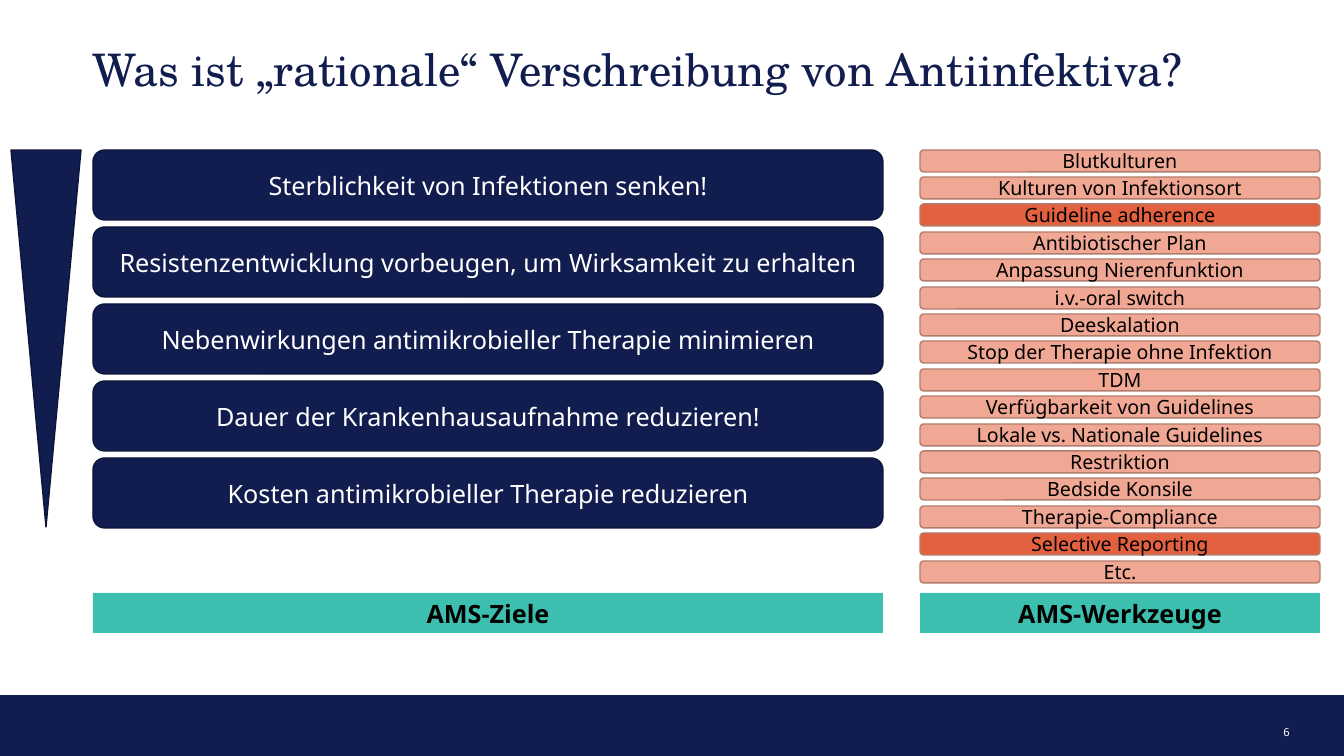
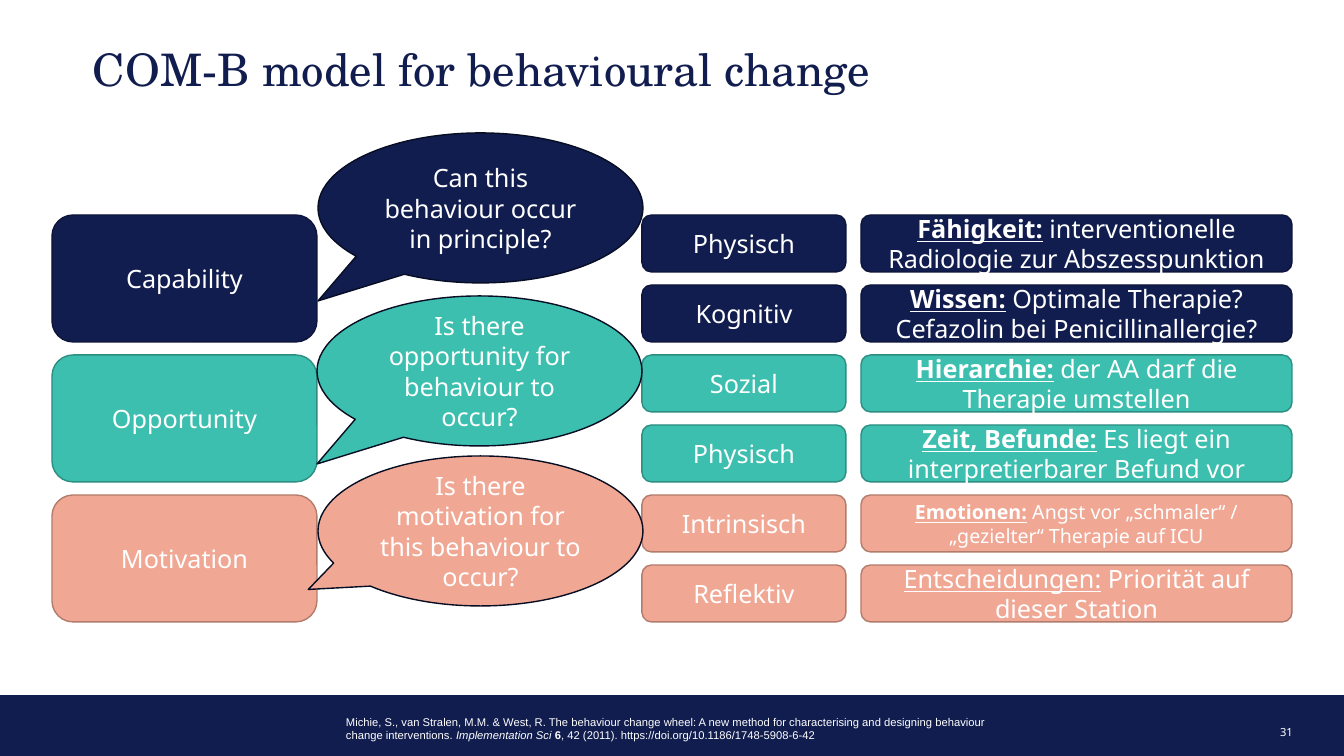
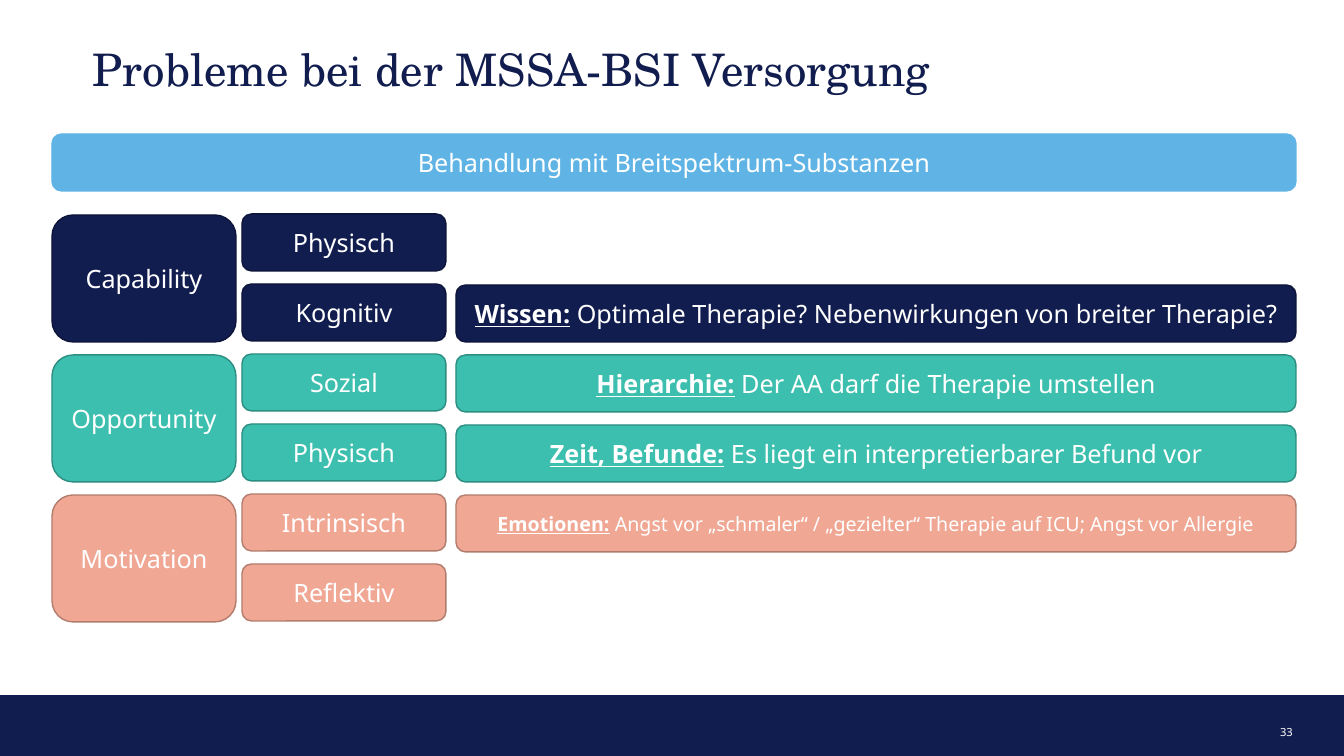
from pptx import Presentation
from pptx.dml.color import RGBColor
from pptx.enum.shapes import MSO_SHAPE
from pptx.enum.text import MSO_ANCHOR, MSO_AUTO_SIZE, PP_ALIGN
from pptx.util import Emu, Pt

COLOURS = {
    "navy": "111D4E",
    "navy edge": "0D153A",
    "callout edge": "070D22",
    "teal": "3CBFAE",
    "teal edge": "2C8D81",
    "salmon": "F0A794",
    "salmon edge": "B27C6D",
    "orange": "E4613F",
    "sky": "5FB4E5",
    "white": "FFFFFF",
    "black": "000000",
}
EMU_PER_PX = 12192000 / 1344
TITLE_FONT, BODY_FONT, CITATION_FONT = "TeX Gyre Schola", "Noto Sans", "Arial"

GOALS = [
    "Sterblichkeit von Infektionen senken!",
    "Resistenzentwicklung vorbeugen, um Wirksamkeit zu erhalten",
    "Nebenwirkungen antimikrobieller Therapie minimieren",
    "Dauer der Krankenhausaufnahme reduzieren!",
    "Kosten antimikrobieller Therapie reduzieren",
]
TOOLS = [
    "Blutkulturen",
    "Kulturen von Infektionsort",
    "Guideline adherence",
    "Antibiotischer Plan",
    "Anpassung Nierenfunktion",
    "i.v.-oral switch",
    "Deeskalation",
    "Stop der Therapie ohne Infektion",
    "TDM",
    "Verfügbarkeit von Guidelines",
    "Lokale vs. Nationale Guidelines",
    "Restriktion",
    "Bedside Konsile",
    "Therapie-Compliance",
    "Selective Reporting",
    "Etc.",
]
KEY_TOOLS = {"Guideline adherence", "Selective Reporting"}
FACTORS = {"Capability": "navy", "Opportunity": "teal", "Motivation": "salmon"}
FACTOR_COLOURS = list(FACTORS.values())
SUBFACTORS = ["Physisch", "Kognitiv", "Sozial", "Physisch", "Intrinsisch", "Reflektiv"]
ROW_TOP, ROW_PITCH, ROW_HEIGHT = 215, 70, 57


def px(length):
    return Emu(round(length * EMU_PER_PX))


def colour(name):
    return RGBColor.from_string(COLOURS[name])


class Deck:
    def __init__(self):
        self.presentation = Presentation()
        self.presentation.slide_width = px(1344)
        self.presentation.slide_height = px(756)
        self.slide = None

    def add_slide(self, title, number):
        layout = self.presentation.slide_layouts[5]
        self.slide = self.presentation.slides.add_slide(layout)
        self.shape(MSO_SHAPE.RECTANGLE, (0, 695, 1344, 61), "navy")
        placeholder = self.slide.shapes.title
        placeholder.left, placeholder.top = px(93), px(40)
        placeholder.width, placeholder.height = px(1159), px(107)
        frame = placeholder.text_frame
        frame.margin_left = frame.margin_right = frame.margin_bottom = 0
        frame.margin_top = px(8)
        frame.auto_size = MSO_AUTO_SIZE.NONE
        self.add_runs(frame, [(title, "")], 32, "navy", TITLE_FONT,
                      PP_ALIGN.LEFT, MSO_ANCHOR.TOP)
        frame.paragraphs[0].line_spacing = 0.9
        self.text((1252, 710, 69, 34), [(number, "")], 8,
                  align=PP_ALIGN.CENTER, anchor=MSO_ANCHOR.BOTTOM)

    def add_runs(self, frame, runs, size, ink="white", font=BODY_FONT,
                 align=PP_ALIGN.CENTER, anchor=MSO_ANCHOR.MIDDLE):
        frame.word_wrap = True
        frame.vertical_anchor = anchor
        paragraph = frame.paragraphs[0]
        paragraph.alignment = align
        for text, style in runs:
            run = paragraph.add_run()
            run.text = text
            run.font.name = font
            run.font.size = Pt(size)
            run.font.color.rgb = colour(ink)
            run.font.bold = "b" in style
            run.font.italic = "i" in style
            run.font.underline = "u" in style

    def text(self, box, runs, size, font=BODY_FONT, align=PP_ALIGN.LEFT,
             anchor=MSO_ANCHOR.TOP):
        textbox = self.slide.shapes.add_textbox(*map(px, box))
        self.add_runs(textbox.text_frame, runs, size, "white", font, align, anchor)

    def shape(self, kind, box, fill, edge=None, runs=(), size=18, ink="white"):
        shape = self.slide.shapes.add_shape(kind, *map(px, box))
        shape.shadow.inherit = False
        shape.fill.solid()
        shape.fill.fore_color.rgb = colour(fill)
        if edge:
            shape.line.color.rgb = colour(edge)
            shape.line.width = Pt(1)
        else:
            shape.line.fill.background()
        if runs:
            self.add_runs(shape.text_frame, runs, size, ink)
        return shape

    def card(self, box, fill, runs, size=18):
        edge = f"{fill} edge" if f"{fill} edge" in COLOURS else fill
        self.shape(MSO_SHAPE.ROUNDED_RECTANGLE, box, fill, edge, runs, size)

    def tool(self, box, label):
        fill = "orange" if label in KEY_TOOLS else "salmon"
        self.shape(MSO_SHAPE.ROUNDED_RECTANGLE, box, fill, "salmon edge",
                   [(label, "")], 14, "black")

    def caption(self, box, label):
        self.shape(MSO_SHAPE.RECTANGLE, box, "teal", runs=[(label, "b")], ink="black")

    def callout(self, box, fill, question, tip):
        shape = self.shape(MSO_SHAPE.OVAL_CALLOUT, box, fill, "callout edge",
                           [(question, "")])
        for index, offset in enumerate(tip):
            shape.adjustments[index] = offset

    def factors(self, width, subfactor_left, subfactor_top):
        for index, (label, fill) in enumerate(FACTORS.items()):
            top = ROW_TOP + index * 2 * ROW_PITCH
            self.card((52, top, width, 127), fill, [(label, "")])
        for row, label in enumerate(SUBFACTORS):
            top = subfactor_top + row * ROW_PITCH
            self.card((subfactor_left, top, 204, ROW_HEIGHT),
                      FACTOR_COLOURS[row // 2], [(label, "")])

    def details(self, left, width, first_row, entries):
        for row, (heading, style, body, size) in enumerate(entries, first_row):
            self.card((left, ROW_TOP + row * ROW_PITCH, width, ROW_HEIGHT),
                      FACTOR_COLOURS[row // 2],
                      [(heading, style), (f" {body}", "")], size)


def goals_slide(deck):
    deck.add_slide("Was ist „rationale“ Verschreibung von Antiinfektiva?", "6")
    for index, label in enumerate(TOOLS):
        top = 150 + 411 * index // (len(TOOLS) - 1)
        deck.tool((920, top, 400, 22), label)
    for index, label in enumerate(GOALS):
        deck.card((93, 150 + 77 * index, 790, 70), "navy", [(label, "")])
    deck.caption((93, 593, 790, 40), "AMS-Ziele")
    deck.caption((920, 593, 400, 40), "AMS-Werkzeuge")
    priority = deck.shape(MSO_SHAPE.ISOSCELES_TRIANGLE, (11, 150, 70, 377),
                          "navy", "navy edge")
    priority.rotation = 180


def model_slide(deck):
    deck.add_slide("COM-B model for behavioural change", "31")
    deck.factors(265, 642, ROW_TOP)
    deck.details(861, 431, 0, [
        ("Fähigkeit:", "bu", "interventionelle Radiologie zur Abszesspunktion", 18),
        ("Wissen:", "bu", "Optimale Therapie? Cefazolin bei Penicillinallergie?", 18),
        ("Hierarchie:", "bu", "der AA darf die Therapie umstellen", 18),
        ("Zeit, Befunde:", "bu", "Es liegt ein interpretierbarer Befund vor", 18),
        ("Emotionen:", "bu", "Angst vor „schmaler“ / „gezielter“ Therapie auf ICU", 14),
        ("Entscheidungen:", "u", "Priorität auf dieser Station", 18),
    ])
    questions = [
        (318, 133, "Can this behaviour occur in principle?", (-0.5, 0.62)),
        (317, 296, "Is there opportunity for behaviour to occur?", (-0.5, 0.62)),
        (318, 456, "Is there motivation for this behaviour to occur?", (-0.53, 0.39)),
    ]
    for fill, (left, top, question, tip) in zip(FACTOR_COLOURS, questions):
        deck.callout((left, top, 325, 150), fill, question, tip)
    deck.text((336, 710, 672, 37), [
        ("Michie, S., van Stralen, M.M. & West, R. The behaviour change wheel: "
         "A new method for characterising and designing behaviour change "
         "interventions. ", ""),
        ("Implementation Sci ", "i"),
        ("6", "b"),
        (", 42 (2011). https://doi.org/10.1186/1748-5908-6-42", ""),
    ], 8, CITATION_FONT)


def problems_slide(deck):
    deck.add_slide("Probleme bei der MSSA-BSI Versorgung", "33")
    deck.factors(184, 242, ROW_TOP - 1)
    deck.details(456, 840, 1, [
        ("Wissen:", "bu", "Optimale Therapie? Nebenwirkungen von breiter Therapie?", 18),
        ("Hierarchie:", "bu", "Der AA darf die Therapie umstellen", 18),
        ("Zeit, Befunde:", "bu", "Es liegt ein interpretierbarer Befund vor", 18),
        ("Emotionen:", "bu", "Angst vor „schmaler“ / „gezielter“ Therapie auf ICU; "
         "Angst vor Allergie", 14),
    ])
    deck.card((52, 134, 1244, ROW_HEIGHT), "sky",
              [("Behandlung mit Breitspektrum-Substanzen", "")])


def main():
    deck = Deck()
    goals_slide(deck)
    model_slide(deck)
    problems_slide(deck)
    deck.presentation.save("out.pptx")


if __name__ == "__main__":
    main()
